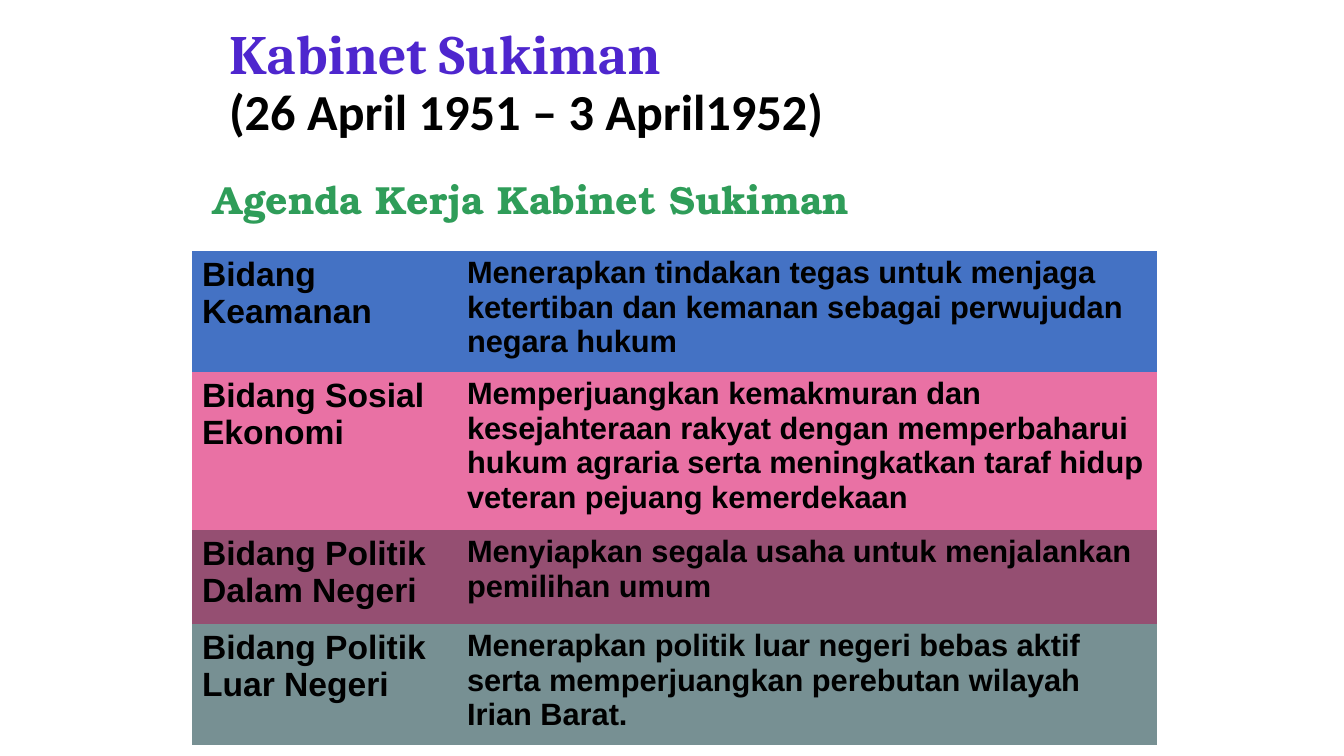
from pptx import Presentation
from pptx.dml.color import RGBColor
from pptx.enum.text import MSO_ANCHOR, PP_ALIGN
from pptx.oxml.ns import qn
from pptx.util import Emu, Pt

COLORS = {
    "black": "000000", "violet": "4E26CE", "green": "2F9D59",
    "blue": "4472C4", "pink": "E971A4", "plum": "954F72", "slate": "779093",
}
NO_GRID = "{2D5ABB26-0587-4C30-8999-92F81FD0307C}"
AGENDA = [
    ("Bidang Keamanan",
     "Menerapkan tindakan tegas untuk menjaga ketertiban dan kemanan "
     "sebagai perwujudan negara hukum", "blue", 121),
    ("Bidang Sosial Ekonomi",
     "Memperjuangkan kemakmuran dan kesejahteraan rakyat dengan memperbaharui "
     "hukum agraria serta meningkatkan taraf hidup veteran pejuang kemerdekaan",
     "pink", 158),
    ("Bidang Politik Dalam Negeri",
     "Menyiapkan segala usaha untuk menjalankan pemilihan umum", "plum", 94),
    ("Bidang Politik Luar Negeri",
     "Menerapkan politik luar negeri bebas aktif serta memperjuangkan "
     "perebutan wilayah Irian Barat.", "slate", 121),
]


def px(n):
    return Emu(round(n * 914400 / 100.8))


class Deck:
    """Hold the style and the current slide, and draw each kind of element."""

    def __init__(self, wide, high):
        self.prs = Presentation()
        self.prs.slide_width, self.prs.slide_height = px(wide), px(high)
        self.slide = self.prs.slides.add_slide(self.prs.slide_layouts[5])

    def color(self, name):
        return RGBColor.from_string(COLORS[name])

    def style(self, run, face, size, color):
        font = run.font
        font.name, font.size, font.bold = face, Pt(size), True
        font.color.rgb = self.color(color)

    def title(self, text, box, looks):
        shape = self.slide.shapes.title
        shape.left, shape.top, shape.width, shape.height = map(px, box)
        frame = shape.text_frame
        frame.text = text
        frame.word_wrap = True
        frame.vertical_anchor = MSO_ANCHOR.MIDDLE
        para = frame.paragraphs[0]
        para.alignment, para.line_spacing = PP_ALIGN.LEFT, 0.9
        for run, look in zip(para.runs, looks):
            self.style(run, *look)

    def text(self, text, box, look):
        frame = self.slide.shapes.add_textbox(*map(px, box)).text_frame
        frame.text = text
        frame.word_wrap = True
        para = frame.paragraphs[0]
        para.line_spacing = 0.9
        self.style(para.runs[0], *look)

    def table(self, rows, left, top, cols, sizes):
        high = sum(row[-1] for row in rows)
        box = map(px, (left, top, sum(cols), high))
        frame = self.slide.shapes.add_table(len(rows), len(cols), *box)
        for tag in frame.element.iter(qn("a:tableStyleId")):
            tag.text = NO_GRID
        table = frame.table
        table.first_row = table.horz_banding = False
        for col, wide in zip(table.columns, cols):
            col.width = px(wide)
        for row, (*texts, fill, tall) in zip(table.rows, rows):
            row.height = px(tall)
            for cell, text, size in zip(row.cells, texts, sizes):
                cell.fill.solid()
                cell.fill.fore_color.rgb = self.color(fill)
                cell.text_frame.text = text
                run = cell.text_frame.paragraphs[0].runs[0]
                self.style(run, "Arial", size, "black")


def main():
    deck = Deck(1344, 756)
    deck.title("Kabinet Sukiman\v(26 April 1951 – 3 April1952)",
               (219, 21, 907, 126),
               [("Cambria", 39.6, "violet"), ("Calibri", 36, "black")])
    deck.text("Agenda Kerja Kabinet Sukiman", (204, 176, 835, 83),
              ("TeX Gyre Bonum", 28, "green"))
    deck.table(AGENDA, 192, 251, (265, 700), (24, 22))
    deck.prs.save("out.pptx")


if __name__ == "__main__":
    main()
